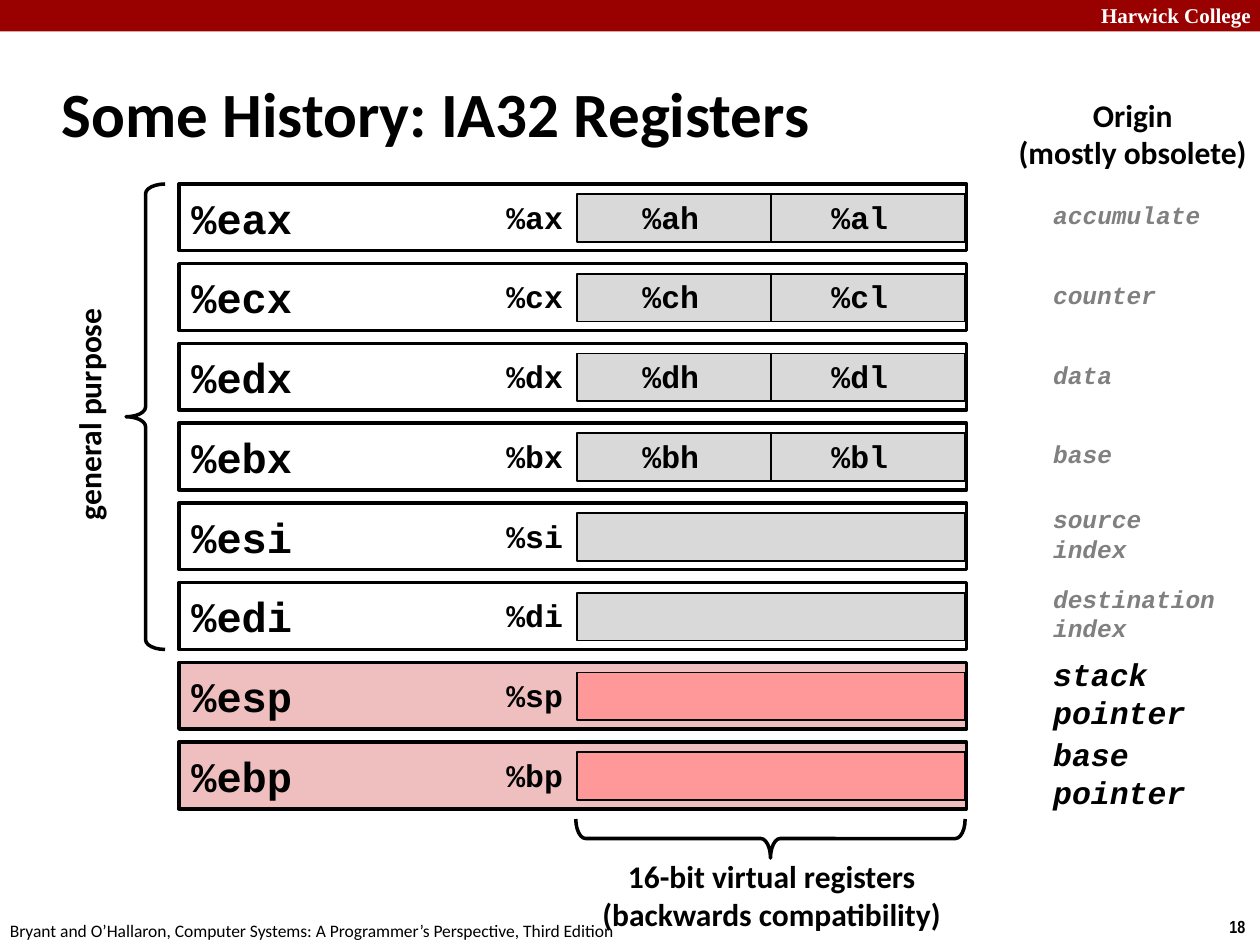
from pptx import Presentation
from pptx import util as u
from pptx.dml.color import RGBColor
from pptx.enum import shapes, text
from pptx.oxml.ns import qn
from lxml import etree

# Content: register, 16-bit part, byte halves, origin
ROWS = [
    ("%eax", "%ax", ("%ah", "%al"), ["accumulate"]),
    ("%ecx", "%cx", ("%ch", "%cl"), ["counter"]),
    ("%edx", "%dx", ("%dh", "%dl"), ["data"]),
    ("%ebx", "%bx", ("%bh", "%bl"), ["base"]),
    ("%esi", "%si", (), ["source", "index"]),
    ("%edi", "%di", (), ["destination", "index"]),
    ("%esp", "%sp", (), ["stack", "pointer"]),
    ("%ebp", "%bp", (), ["base", "pointer"]),
]
TITLE = "Some History: IA32 Registers"
SCHOOL = "Harwick College"
CREDIT = "Bryant and O’Hallaron, Computer Systems: A Programmer’s Perspective, Third Edition"
ORIGIN = ["Origin", "(mostly obsolete)"]
VIRTUAL = ["16-bit virtual registers", "(backwards compatibility)"]
GENERAL = 6  # the first rows are general purpose

# Grid
WIDE, HIGH = 10, 7.5
LEFT, TOP, LONG, TALL = 1.42, 1.46, 6.25, 0.53
STEP = 4.43 / 7
PART, HALF, DEEP = 4.58, 1.54, 0.38
NAMES, NOTES = 3.92, 8.26
CODE, SANS = "Courier New", "Calibri"

prs = Presentation()
prs.slide_width, prs.slide_height = u.Inches(WIDE), u.Inches(HIGH)
slide = prs.slides.add_slide(prs.slide_layouts[5])


def color(code):
    return RGBColor.from_string(code)


def inches(*spots):
    return [u.Inches(spot) for spot in spots]


def write(frame, lines, size, font, ink="000000", bold=True, slant=False,
          align=text.PP_ALIGN.LEFT):
    for i, line in enumerate(lines):
        para = frame.paragraphs[0] if i == 0 else frame.add_paragraph()
        para.alignment = align
        run = para.add_run()
        run.text = line
        face = run.font
        face.name, face.size = font, u.Pt(size)
        face.bold, face.italic = bold, slant
        face.color.rgb = color(ink)


def label(at, lines, size, font, wrap=False, **style):
    box = slide.shapes.add_textbox(*inches(*at))
    frame = box.text_frame
    frame.word_wrap = wrap
    frame.auto_size = text.MSO_AUTO_SIZE.SHAPE_TO_FIT_TEXT
    write(frame, lines, size, font, **style)
    return box


def draw(kind, at, fill=None, line=None):
    item = slide.shapes.add_shape(kind, *inches(*at))
    item.shadow.inherit = False
    if fill:
        item.fill.solid()
        item.fill.fore_color.rgb = color(fill)
    else:
        item.fill.background()
    if line:
        item.line.color.rgb = color("000000")
        item.line.width = u.Pt(line)
    else:
        item.line.fill.background()
    return item


def box(at, fill, line=None):
    return draw(shapes.MSO_SHAPE.RECTANGLE, at, fill, line)


def brace(at, turn):
    item = draw(shapes.MSO_SHAPE.RIGHT_BRACE, at, line=2)
    item.rotation = turn
    item.adjustments[0], item.adjustments[1] = 0.25, 0.5


def divide(x, top, low):
    rule = slide.shapes.add_connector(
        shapes.MSO_CONNECTOR.STRAIGHT, *inches(x, top, x, low))
    rule.line.color.rgb = color("000000")
    rule.line.width = u.Pt(1)
    etree.SubElement(rule._element.spPr, qn("a:effectLst"))


# Header and footer
box((0, 0, WIDE, 0.25), "990000")
label((8.64, -0.03, 1.43, 0.3), [SCHOOL], 12, "Times New Roman",
      wrap=True, ink="FFFFFF")
label((9.66, 7.22, 0.34, 0.27), ["18"], 10, "Arial Narrow")
label((-0.02, 7.25, 5.08, 0.27), [CREDIT], 10, SANS, bold=False)

# Title
head = slide.shapes.title
head.left, head.top, head.width, head.height = inches(0.39, 0.48, 8.3, 0.83)
head.text_frame.vertical_anchor = text.MSO_ANCHOR.MIDDLE
head.text_frame.word_wrap = True
write(head.text_frame, [TITLE], 36, SANS)

# Registers
for i, (name, part, halves, origin) in enumerate(ROWS):
    top = TOP + i * STEP
    plain = i < GENERAL
    bar = box((LEFT, top, LONG, TALL), "FFFFFF" if plain else "EFBFBF", 2)
    bar.text_frame.vertical_anchor = text.MSO_ANCHOR.MIDDLE
    write(bar.text_frame, [name], 24, CODE)

    inner = top + 0.08
    box((PART, inner, 2 * HALF, DEEP), "D9D9D9" if plain else "FF9999", 1)
    label((NAMES, top + 0.06, 0.65, 0.4), [part], 18, CODE)
    if halves:
        divide(PART + HALF, inner, inner + DEEP)
    for j, half in enumerate(halves):
        label((5 + 1.5 * j, top + 0.06, 0.65, 0.4), [half], 18, CODE)

    # Origin, centred on its row, with room to spare for its longest line
    size, ink = (14, "808080") if plain else (18, "000000")
    tall = 0.1 + len(origin) * size / 60
    wide = 0.3 + max(map(len, origin)) * size / 120
    label((NOTES, top + TALL / 2 - 0.02 - tall / 2, wide, tall), origin,
          size, CODE, ink=ink, slant=True)

# Braces and their captions
mid = text.PP_ALIGN.CENTER
brace((5.96, 5.11, 0.31, 3.09), 90)
label((4.67, 6.75, 2.91, 0.71), VIRTUAL, 18, SANS, align=mid)
brace((1, TOP, 0.31, (GENERAL - 1) * STEP + TALL), 180)
label((-0.24, 3.08, 1.89, 0.4), ["general purpose"], 18, SANS).rotation = 270
label((7.98, 0.71, 2.02, 0.71), ORIGIN, 18, SANS, align=mid)

prs.save("out.pptx")
